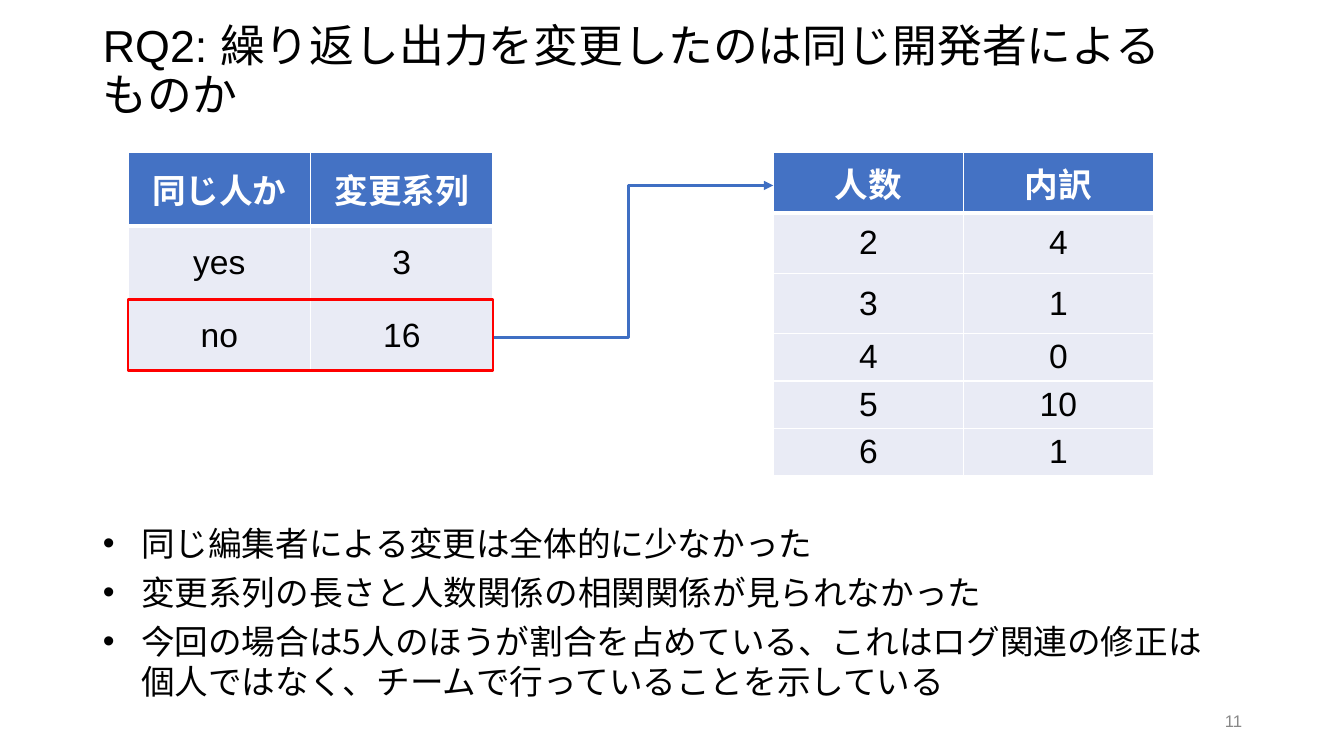
"""Builds the RQ2 slide: two linked tables above three findings."""
from lxml import etree
from pptx import Presentation
from pptx.dml.color import RGBColor
from pptx.enum import shapes, text
from pptx.oxml import ns
from pptx.util import Inches, Pt

BLACK = RGBColor(0x00, 0x00, 0x00)
WHITE = RGBColor(0xFF, 0xFF, 0xFF)
BLUE = RGBColor(0x44, 0x72, 0xC4)
LINK_BLUE = RGBColor(0x3F, 0x6F, 0xC3)
PALE = RGBColor(0xE9, 0xEB, 0xF5)
RED = RGBColor(0xFF, 0x00, 0x00)
GREY = RGBColor(0x88, 0x88, 0x88)
LATIN, CJK, CJK_SC = "Arial", "Noto Sans CJK JP", "Noto Sans CJK SC"

TITLE = "RQ2: 繰り返し出力を変更したのは同じ開発者による\vものか"
FINDINGS = [
    "同じ編集者による変更は全体的に少なかった",
    "変更系列の長さと人数関係の相関関係が見られなかった",
    "今回の場合は5人のほうが割合を占めている、これはログ関連の修正は\v"
    "個人ではなく、チームで行っていることを示している",
]
PAGE = "11"
TABLES = [
    {"at": (1.27, 1.51), "width": 3.62, "heights": [0.73] * 3,
     "header_fonts": (CJK_SC, CJK),
     "rows": [("同じ人か", "変更系列"), ("yes", "3"), ("no", "16")]},
    {"at": (7.67, 1.51), "width": 3.77, "heights": [0.6] * 3 + [0.47] * 3,
     "header_fonts": (CJK, CJK),
     "rows": [("人数", "内訳"), ("2", "4"), ("3", "1"), ("4", "0"),
              ("5", "10"), ("6", "1")]},
]
NO_ROW = (1.27, 2.97, 3.62, 0.71)
LINK = (4.9, 3.35, 7.67, 1.84)
BEND = 0.481


def inches(values):
    return [Inches(v) for v in values]


def place(sp, box):
    for name, value in zip(("left", "top", "width", "height"), inches(box)):
        setattr(sp, name, value)


def write(p, content, color, latin=LATIN, east=CJK, para=None, **font):
    p.text = content
    for name, value in (para or {}).items():
        setattr(p, name, value)
    for r in p.runs:
        r.font.color.rgb = color
        for name, value in {"name": latin, **font}.items():
            setattr(r.font, name, value)
        ea = etree.SubElement(r.font._element, ns.qn("a:ea"))
        ea.set("typeface", east)


def border(cell, widths):
    tc_pr = cell._tc.get_or_add_tcPr()
    for side, width in zip("LRTB", widths):
        ln = etree.SubElement(tc_pr, ns.qn(f"a:ln{side}"), w=str(Pt(width)))
        fill = etree.SubElement(ln, ns.qn("a:solidFill"))
        etree.SubElement(fill, ns.qn("a:srgbClr"), val=str(WHITE))


def add_grid(s, at, width, heights, header_fonts, rows):
    columns = len(header_fonts)
    box = inches((*at, width, sum(heights)))
    table = s.shapes.add_table(len(rows), columns, *box).table
    for column in table.columns:
        column.width = Inches(width / columns)
    for i, (height, row) in enumerate(zip(heights, rows)):
        table.rows[i].height = Inches(height)
        for j, value in enumerate(row):
            cell = table.cell(i, j)
            for side in ("left", "right", "top", "bottom"):
                setattr(cell, f"margin_{side}", 0)
            cell.vertical_anchor = text.MSO_ANCHOR.MIDDLE
            border(cell, (1, 1, 3 if i == 1 else 1, 3 if i == 0 else 1))
            cell.fill.solid()
            cell.fill.fore_color.rgb = PALE if i else BLUE
            face = LATIN if i else header_fonts[j]
            write(cell.text_frame.paragraphs[0], value, BLACK if i else WHITE,
                  face, CJK if i else face, {"alignment": text.PP_ALIGN.CENTER},
                  size=Pt(24), bold=i == 0)


def add_text(s):
    title, body = s.shapes.title, s.placeholders[1]
    page = s.shapes.add_textbox(*inches((9.42, 6.95, 3, 0.4)))
    place(title, (0.92, 0.14, 11.5, 1.16))
    place(body, (0.92, 5.14, 11.57, 1.88))
    for sp, anchor in ((title, text.MSO_ANCHOR.MIDDLE),
                       (body, text.MSO_ANCHOR.TOP),
                       (page, text.MSO_ANCHOR.MIDDLE)):
        tf = sp.text_frame
        tf.word_wrap = True
        tf.auto_size = text.MSO_AUTO_SIZE.NONE
        tf.vertical_anchor = anchor
    write(title.text_frame.paragraphs[0], TITLE, BLACK, size=Pt(32),
          para={"alignment": text.PP_ALIGN.LEFT, "line_spacing": 0.9})
    write(page.text_frame.paragraphs[0], PAGE, GREY, size=Pt(12),
          para={"alignment": text.PP_ALIGN.RIGHT})
    tf = body.text_frame
    for i, finding in enumerate(FINDINGS):
        p = tf.add_paragraph() if i else tf.paragraphs[0]
        write(p, finding, BLACK, CJK, size=Pt(24),
              para={"space_before": Pt(0), "space_after": Pt(6)})
        p_pr = p._p.get_or_add_pPr()
        p_pr.set("marL", str(Inches(0.38)))
        p_pr.set("indent", str(-Inches(0.38)))
        etree.SubElement(p_pr, ns.qn("a:buFont"), typeface=LATIN)
        etree.SubElement(p_pr, ns.qn("a:buChar"), char="•")


def add_link(s):
    link = s.shapes.add_connector(shapes.MSO_CONNECTOR.ELBOW, *inches(LINK))
    link.line.color.rgb = LINK_BLUE
    link.line.width = Pt(2.25)
    etree.SubElement(link.line._get_or_add_ln(), ns.qn("a:tailEnd"), type="triangle")
    sp_pr = link._element.spPr
    etree.SubElement(sp_pr, ns.qn("a:effectLst"))
    guides = sp_pr.find(ns.qn("a:prstGeom")).get_or_add_avLst()
    etree.SubElement(guides, ns.qn("a:gd"), name="adj1",
                     fmla=f"val {round(BEND * 100000)}")


def add_highlight(s):
    sp = s.shapes.add_shape(shapes.MSO_SHAPE.RECTANGLE, *inches(NO_ROW))
    sp.shadow.inherit = False
    sp.fill.background()
    sp.line.color.rgb = RED
    sp.line.width = Pt(2)


def main():
    prs = Presentation()
    prs.slide_width, prs.slide_height = inches((13.33, 7.5))
    s = prs.slides.add_slide(prs.slide_layouts[1])
    add_text(s)
    for grid in TABLES:
        add_grid(s, **grid)
    add_link(s)
    add_highlight(s)
    prs.save("out.pptx")


if __name__ == "__main__":
    main()
